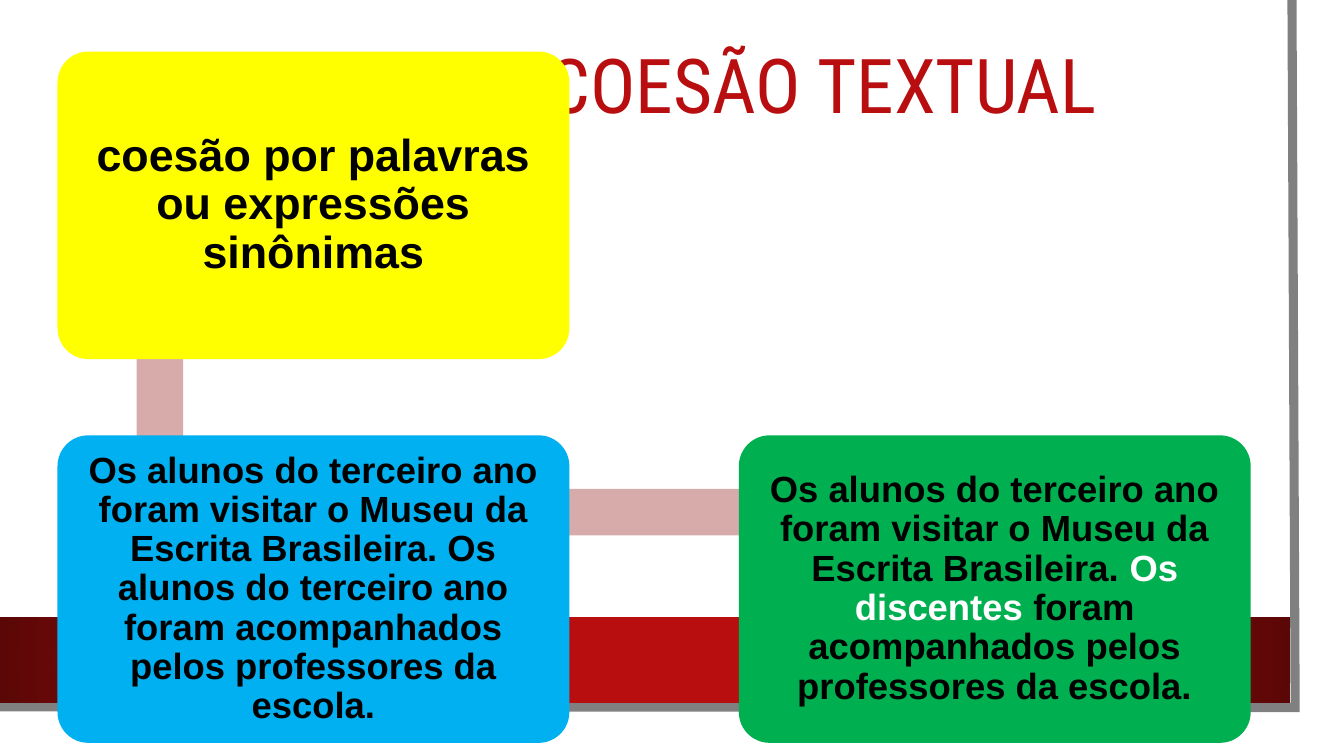
from dataclasses import dataclass

import pptx
import pptx.dml.color
import pptx.enum.shapes
import pptx.enum.text
import pptx.oxml
import pptx.oxml.ns
import pptx.util
from pptx.util import Cm

SHAPES = pptx.enum.shapes.MSO_SHAPE
MIDDLE = pptx.enum.text.MSO_ANCHOR.MIDDLE
CENTER = pptx.enum.text.PP_ALIGN.CENTER
DRAWING = 'xmlns:a="http://schemas.openxmlformats.org/drawingml/2006/main"'


@dataclass(frozen=True)
class Theme:
    red: str = "B80E0F"
    dark_red: str = "5C0707"
    gray: str = "808080"
    pink: str = "D8ABAB"
    yellow: str = "FFFF00"
    blue: str = "00B0F0"
    green: str = "00B050"
    black: str = "000000"
    white: str = "FFFFFF"
    title_font: str = "Roboto Condensed"
    body_font: str = "Arial"
    title_size: int = 54
    heading_size: int = 32
    example_size: int = 26


THEME = Theme()


@dataclass(frozen=True)
class Box:
    """A region of the slide, in centimetres."""
    left: float
    top: float
    width: float
    height: float

    def lengths(self):
        return Cm(self.left), Cm(self.top), Cm(self.width), Cm(self.height)

    def anchor(self):
        """The point of a card where the linking bars meet."""
        return self.left + 0.2 * self.width, self.top + 0.25 * self.height


def rgb(value):
    return pptx.dml.color.RGBColor.from_string(value)


def add_block(page, kind, box, color):
    block = page.shapes.add_shape(kind, *box.lengths())
    block.shadow.inherit = False
    block.fill.solid()
    block.fill.fore_color.rgb = rgb(color)
    block.line.fill.background()
    return block


def format_text(para, font, size, color, bold=False):
    para.alignment = CENTER
    para.line_spacing = 0.9
    para.font.name = font
    para.font.size = pptx.util.Pt(size)
    para.font.bold = bold
    para.font.color.rgb = rgb(color)


def add_frame(page, box):
    # Gray edge along the right and bottom
    right, bottom = box.left + box.width, box.top + box.height
    builder = page.shapes.build_freeform(Cm(right - 0.08), Cm(box.top))
    builder.add_line_segments(
        [(Cm(right), Cm(bottom)), (Cm(box.left), Cm(bottom - 0.02))], close=False)
    edge = builder.convert_to_shape()
    edge.shadow.inherit = False
    edge.fill.background()
    edge.line.color.rgb = rgb(THEME.gray)
    edge.line.width = pptx.util.Pt(6.5)
    outline = edge.element.spPr.find(pptx.oxml.ns.qn("a:ln"))
    outline.append(pptx.oxml.parse_xml(f'<a:miter {DRAWING} lim="800000"/>'))

    # Red band, darkening from its centre
    band_box = Box(0, bottom - 2.28, right - 0.13, 2.16)
    band = add_block(page, SHAPES.RECTANGLE, band_box, THEME.red)
    band.fill.gradient()
    stops = zip(band.fill.gradient_stops, (0.34, 1), (THEME.red, THEME.dark_red))
    for stop, position, color in stops:
        stop.position = position
        stop.color.rgb = rgb(color)
    gradient = band.element.spPr.find(pptx.oxml.ns.qn("a:gradFill"))
    linear = gradient.find(pptx.oxml.ns.qn("a:lin"))
    gradient.replace(linear, pptx.oxml.parse_xml(
        f'<a:path {DRAWING} path="circle">'
        '<a:fillToRect l="50000" t="50000" r="50000" b="50000"/></a:path>'))


def add_title(page, box, text):
    title = page.shapes.title
    title.left, title.top, title.width, title.height = box.lengths()
    title.text_frame.text = text
    title.text_frame.vertical_anchor = MIDDLE
    format_text(title.text_frame.paragraphs[0],
                THEME.title_font, THEME.title_size, THEME.red)


def add_link(page, start, end, thickness=1.17):
    """A bar between the anchors of two cards in one row or column."""
    (x1, y1), (x2, y2) = start.anchor(), end.anchor()
    half = thickness / 2
    if x1 == x2:
        bar = Box(x1 - half, y1, thickness, y2 - y1)
    else:
        bar = Box(x1, y1 - half, x2 - x1, thickness)
    add_block(page, SHAPES.RECTANGLE, bar, THEME.pink)


def add_card(page, box, fill, size, inset, spans):
    card = add_block(page, SHAPES.ROUNDED_RECTANGLE, box, fill)
    card.adjustments[0] = 0.1
    frame = card.text_frame
    frame.word_wrap = True
    frame.vertical_anchor = MIDDLE
    frame.margin_left = frame.margin_right = Cm(inset)
    frame.margin_top = frame.margin_bottom = Cm(inset)
    para = frame.paragraphs[0]
    format_text(para, THEME.body_font, size, THEME.black, bold=True)
    for text, color in spans:
        span = para.add_run()
        span.text = text
        span.font.color.rgb = rgb(color)


def add_diagram(page, box):
    width, height = 12.9, 7.75
    right, bottom = box.left + box.width - width, box.top + box.height - height
    concept = Box(box.left, box.top, width, height)
    repeated = Box(box.left, bottom, width, height)
    cohesive = Box(right, bottom, width, height)

    # Bars behind the cards
    add_link(page, concept, repeated)
    add_link(page, repeated, cohesive)

    # Concept and its two examples
    opening = "Os alunos do terceiro ano foram visitar o Museu da Escrita Brasileira. "
    ending = "foram acompanhados pelos professores da escola."
    add_card(page, concept, THEME.yellow, THEME.heading_size, 0.33,
             [("coesão por palavras ou expressões sinônimas", THEME.black)])
    add_card(page, repeated, THEME.blue, THEME.example_size, 0.28,
             [(opening + "Os alunos do terceiro ano " + ending, THEME.black)])
    add_card(page, cohesive, THEME.green, THEME.example_size, 0.28,
             [(opening, THEME.black), ("Os discentes ", THEME.white),
              (ending, THEME.black)])


def main():
    deck = pptx.Presentation()
    deck.slide_width, deck.slide_height = Cm(33.87), Cm(19.05)
    page = deck.slides.add_slide(deck.slide_layouts[5])
    add_frame(page, Box(-0.08, 0, 32.72, 17.83))
    add_title(page, Box(2.97, 0, 27.94, 4.47), "TIPOS DE COESÃO TEXTUAL")
    add_diagram(page, Box(1.45, 1.3, 30.07, 17.42))
    deck.save("out.pptx")


if __name__ == "__main__":
    main()
